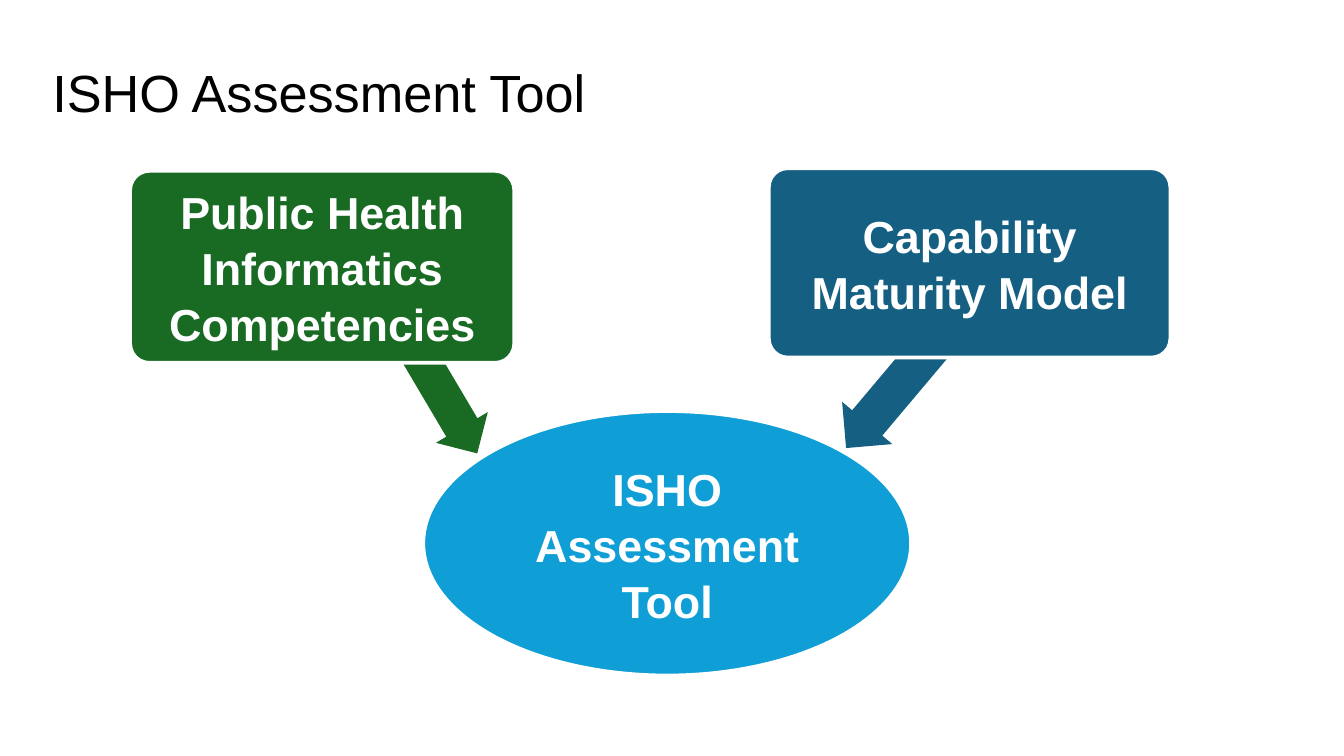
"""Build the ISHO Assessment Tool slide with two inputs leading to one tool."""
import pptx
import pptx.dml.color
import pptx.enum.shapes
import pptx.enum.text
import pptx.util

Cm = pptx.util.Cm
Pt = pptx.util.Pt
RGBColor = pptx.dml.color.RGBColor
SHAPE = pptx.enum.shapes.MSO_SHAPE
ALIGN = pptx.enum.text.PP_ALIGN
ANCHOR = pptx.enum.text.MSO_ANCHOR

BLACK = RGBColor(0x00, 0x00, 0x00)
WHITE = RGBColor(0xFF, 0xFF, 0xFF)
GREEN = RGBColor(0x19, 0x6B, 0x24)
TEAL = RGBColor(0x15, 0x60, 0x82)
SKY = RGBColor(0x0F, 0x9E, 0xD5)


def write_text(holder, text, size=24, color=WHITE, bold=True,
               align=ALIGN.CENTER, inset=(0.12, 0.12), spacing=1.04):
    frame = holder.text_frame
    frame.text = text
    frame.word_wrap = True
    frame.auto_size = pptx.enum.text.MSO_AUTO_SIZE.NONE
    frame.vertical_anchor = ANCHOR.MIDDLE
    frame.margin_left = frame.margin_right = Cm(inset[0])
    frame.margin_top = frame.margin_bottom = Cm(inset[1])
    paragraph = frame.paragraphs[0]
    paragraph.alignment = align
    paragraph.line_spacing = spacing
    font = paragraph.runs[0].font
    font.name = "Arial"
    font.size = Pt(size)
    font.bold = bold
    font.color.rgb = color


def add_title(slide, text):
    title = slide.shapes.title
    title.left, title.top = Cm(0.89), Cm(1.02)
    title.width, title.height = Cm(23.6), Cm(1.42)
    write_text(title, text, size=28, color=BLACK, bold=False,
               align=ALIGN.LEFT, inset=(0.1, 0.05), spacing=1.0)


def add_filled(slide, kind, box, color, adjustments=()):
    filled = slide.shapes.add_shape(kind, *map(Cm, box))
    filled.shadow.inherit = False
    filled.fill.solid()
    filled.fill.fore_color.rgb = color
    filled.line.fill.background()
    for index, value in enumerate(adjustments):
        filled.adjustments[index] = value
    return filled


def add_concept(slide, kind, box, color, text, adjustments=(), inset=(0.12, 0.12)):
    concept = add_filled(slide, kind, box, color, adjustments)
    concept.line.color.rgb = WHITE
    concept.line.width = Pt(2)
    write_text(concept, text, inset=inset)


def add_arrow(slide, box, color, rotation):
    arrow = add_filled(slide, SHAPE.LEFT_ARROW, box, color, (0.6, 0.5))
    arrow.rotation = rotation


def main():
    deck = pptx.Presentation()
    deck.slide_width, deck.slide_height = Cm(25.4), Cm(14.29)
    slide = deck.slides.add_slide(deck.slide_layouts[5])
    add_title(slide, "ISHO Assessment Tool")
    add_concept(slide, SHAPE.OVAL, (8, 7.77, 9.22, 5), SKY,
                "ISHO Assessment Tool", inset=(0.05, 0.05))
    inputs = (
        ("Public Health Informatics Competencies", GREEN,
         (2.46, 3.23, 7.26, 3.63), (6.53, 6.58, 3.3, 1.14), 239.4),
        ("Capability Maturity Model", TEAL,
         (14.53, 3.18, 7.59, 3.58), (15.21, 6.17, 4.39, 1.24), 310.1),
    )
    for text, color, box, arrow_box, rotation in inputs:
        add_arrow(slide, arrow_box, color, rotation)
        add_concept(slide, SHAPE.ROUNDED_RECTANGLE, box, color, text, (0.1,))
    deck.save("out.pptx")


if __name__ == "__main__":
    main()
